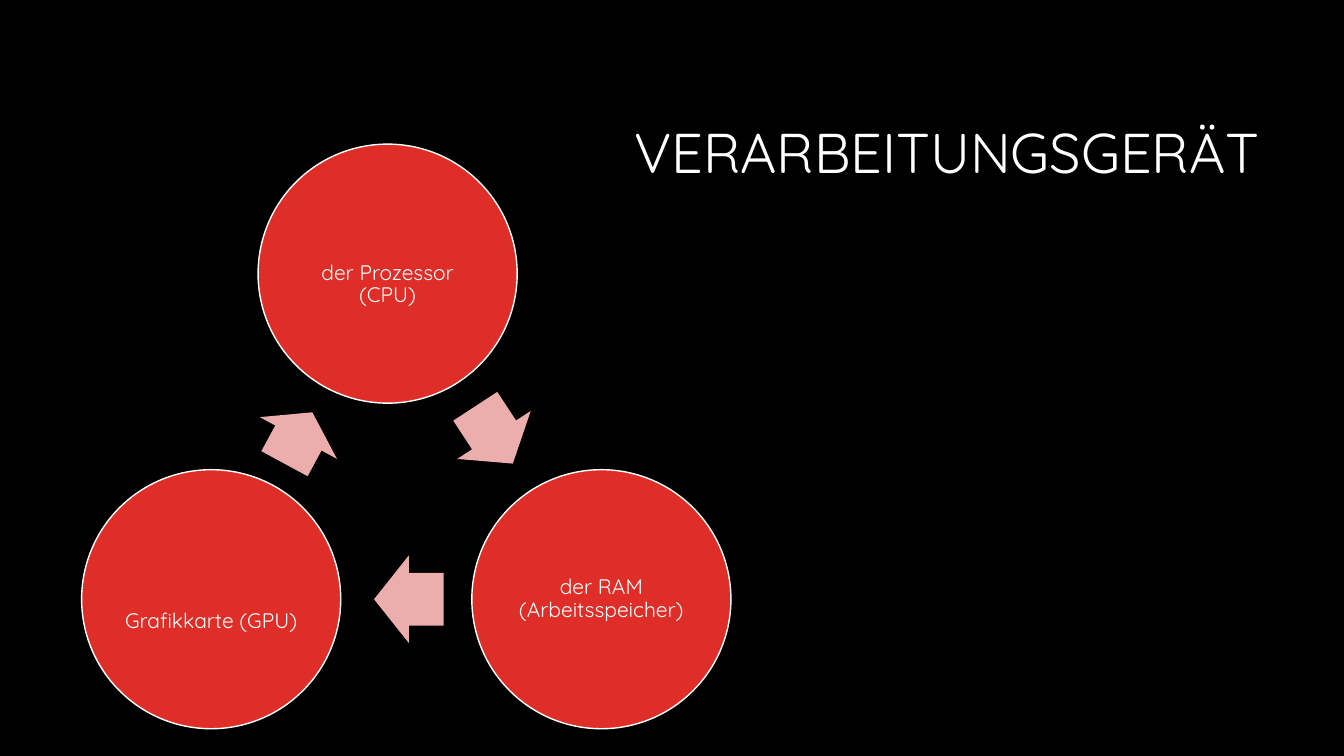
"""Builds a slide with a three-step cycle of processing devices."""
from pptx import Presentation
from pptx.dml.color import RGBColor
from pptx.enum import shapes, text
from pptx.util import Inches, Pt

FONT = "Quicksand"
WHITE, BLACK, RED, PINK = "FFFFFF", "000000", "DF2E28", "ECADAD"
TITLE = "VERARBEITUNGSGERÄT"
DIAMETER = 2.57
INSET = 0.02
LINE_HEIGHT = 0.22
ARROW_HEIGHT = 0.87

# left, top, label, lines the label is lowered by
DEVICES = [
    (2.56, 1.43, "der Prozessor (CPU)", 1),
    (4.68, 4.66, "der RAM (Arbeitsspeicher)", 0),
    (0.81, 4.66, "Grafikkarte (GPU)", 2),
]
# left, top, width, rotation
ARROWS = [
    (4.56, 3.88, 0.68, 56.8),
    (3.71, 5.51, 0.69, 180),
    (2.67, 3.91, 0.58, 298.4),
]


def rgb(value):
    return RGBColor.from_string(value)


def add_shape(s, kind, box, fill):
    sp = s.shapes.add_shape(kind, *map(Inches, box))
    sp.shadow.inherit = False
    sp.fill.solid()
    sp.fill.fore_color.rgb = rgb(fill)
    return sp


def write(sp, content, size, align, insets):
    tf = sp.text_frame
    tf.word_wrap = True
    tf.vertical_anchor = text.MSO_ANCHOR.MIDDLE
    tf.margin_left, tf.margin_top, tf.margin_right, tf.margin_bottom = map(Inches, insets)
    p = tf.paragraphs[0]
    p.text = content
    p.alignment = align
    p.line_spacing = 0.9
    p.font.name = FONT
    p.font.size = Pt(size)
    p.font.color.rgb = rgb(WHITE)


def main():
    prs = Presentation()
    prs.slide_width, prs.slide_height = Inches(13.33), Inches(7.5)
    s = prs.slides.add_slide(prs.slide_layouts[6])
    s.background.fill.solid()
    s.background.fill.fore_color.rgb = rgb(BLACK)

    title = s.shapes.add_textbox(*map(Inches, (3.17, 0.84, 9.42, 1.41)))
    write(title, TITLE, 40, text.PP_ALIGN.RIGHT, (0.1, 0.05, 0.1, 0.05))

    for (left, top, label, lowered), (x, y, width, angle) in zip(DEVICES, ARROWS):
        sp = add_shape(s, shapes.MSO_SHAPE.OVAL, (left, top, DIAMETER, DIAMETER), RED)
        sp.line.color.rgb = rgb(WHITE)
        sp.line.width = Pt(1)
        write(sp, label, 15, text.PP_ALIGN.CENTER,
              (INSET, INSET + lowered * LINE_HEIGHT, INSET, INSET))

        arrow = add_shape(s, shapes.MSO_SHAPE.RIGHT_ARROW, (x, y, width, ARROW_HEIGHT), PINK)
        arrow.line.fill.background()
        arrow.adjustments[0], arrow.adjustments[1] = 0.6, 0.5
        arrow.rotation = angle

    prs.save("out.pptx")


if __name__ == "__main__":
    main()
